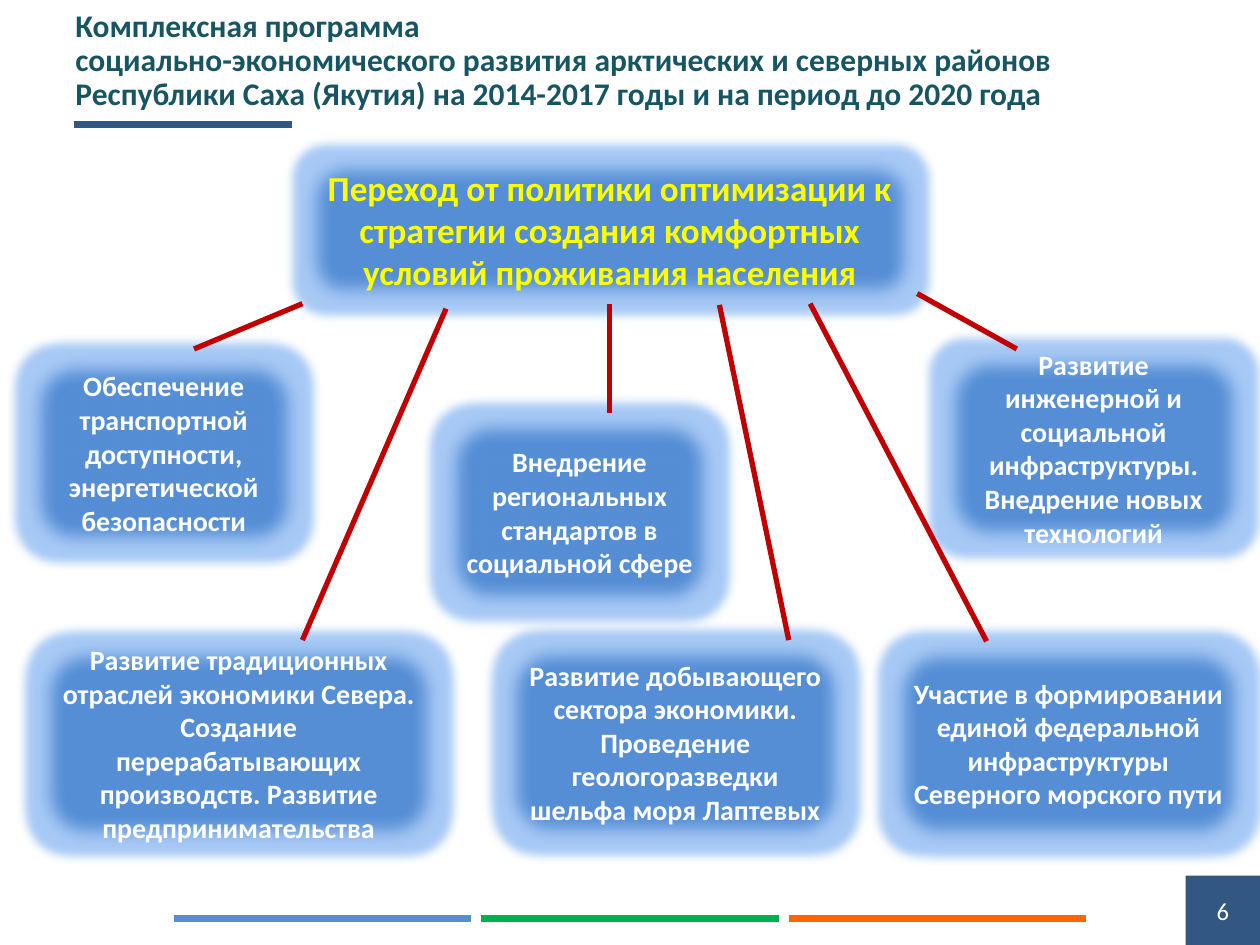
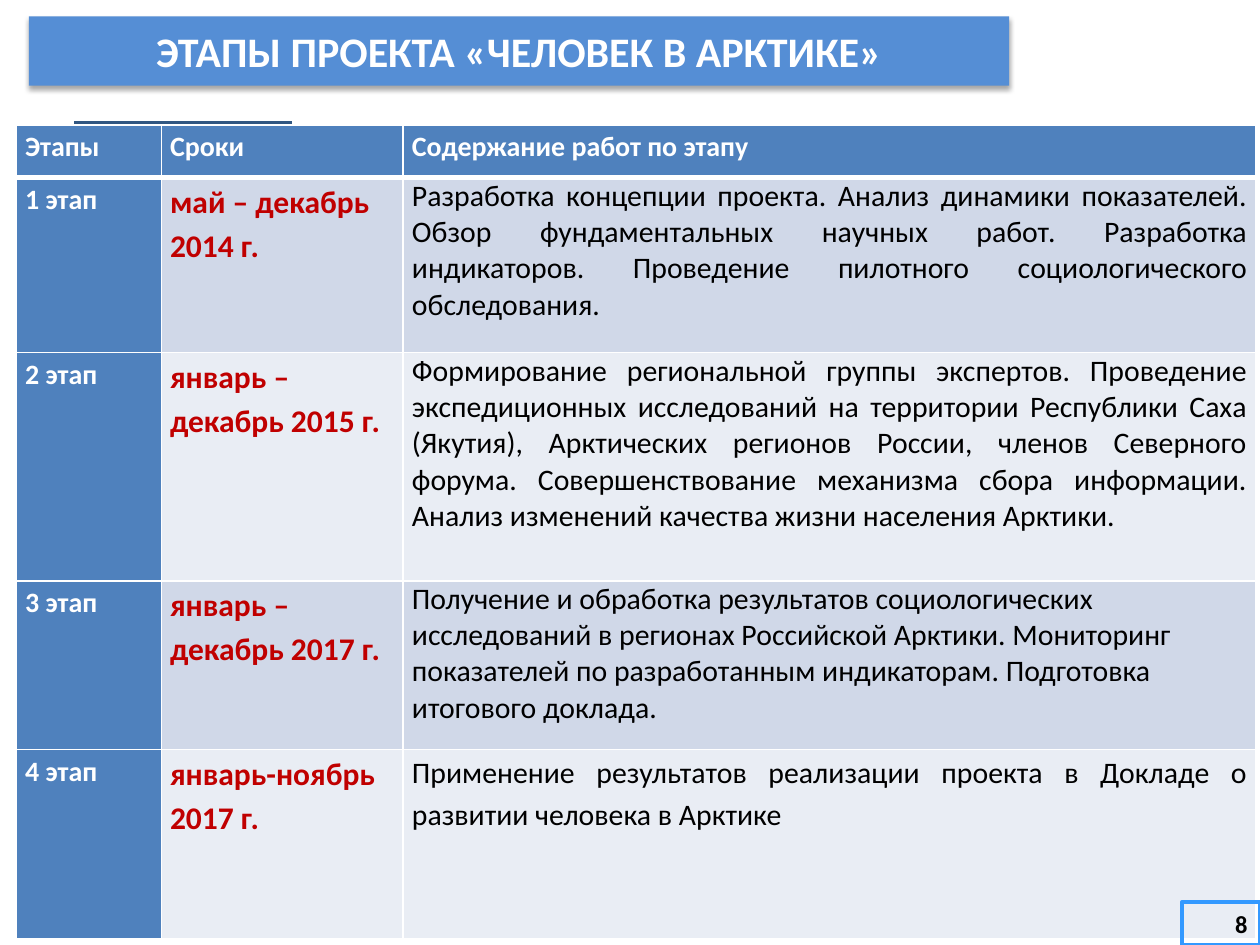
"""Build two slides on the Arctic development programme and project stages."""
from dataclasses import dataclass
from typing import Any, NamedTuple, Optional

from lxml import etree
from pptx import Presentation
from pptx.dml.color import RGBColor
from pptx.enum import shapes, text
from pptx.oxml.ns import qn
from pptx import util as u

EMU_PER_PX = 9144
LEFT, CENTER, RIGHT, JUSTIFY = (
    text.PP_ALIGN.LEFT, text.PP_ALIGN.CENTER, text.PP_ALIGN.RIGHT, text.PP_ALIGN.JUSTIFY)
TOP, MIDDLE = text.MSO_ANCHOR.TOP, text.MSO_ANCHOR.MIDDLE
RECT, ROUNDED = shapes.MSO_SHAPE.RECTANGLE, shapes.MSO_SHAPE.ROUNDED_RECTANGLE


@dataclass(frozen=True)
class Theme:
    """Fonts, colours and type sizes of the deck."""
    font: str = "Calibri"
    title: str = "175563"
    navy: str = "315782"
    blue: str = "558ED5"
    outline: str = "3A5F8C"
    glow: str = "257AE8"
    green: str = "00B050"
    orange: str = "FF6600"
    red: str = "C00000"
    yellow: str = "FFFF00"
    white: str = "FFFFFF"
    black: str = "000000"
    frame: str = "3399FF"
    header: str = "4F81BD"
    bands: tuple[str, str] = ("D0D8E8", "E9EDF4")
    banner_size: int = 24
    hub_size: int = 20
    title_size: int = 18
    body_size: int = 17
    label_size: int = 16
    number_size: int = 14


THEME = Theme()


class Area(NamedTuple):
    """A rectangle in px."""
    left: int
    top: int
    width: int
    height: int


class Goal(NamedTuple):
    """A goal box and the spoke that leads to it."""
    label: str
    area: Area
    start: tuple[int, int]
    end: tuple[int, int]


class Stage(NamedTuple):
    """One row of the stage table."""
    name: str
    period: str
    work: str
    align: Any = JUSTIFY
    spacing: float = 1.0


GOALS = [
    Goal("Участие в формировании единой федеральной инфраструктуры Северного морского пути",
         Area(705, 509, 286, 162), (643, 241), (783, 509)),
    Goal("Развитие добывающего сектора экономики.\n"
         "Проведение геологоразведки шельфа моря Лаптевых",
         Area(398, 508, 276, 162), (571, 242), (626, 508)),
    Goal("Развитие традиционных отраслей экономики Севера. Создание перерабатывающих "
         "производств. Развитие предпринимательства",
         Area(28, 509, 323, 162), (354, 245), (240, 508)),
    Goal("Внедрение региональных стандартов в социальной сфере",
         Area(350, 328, 220, 157), (484, 241), (484, 328)),
    Goal("Развитие инженерной и социальной инфраструктуры. Внедрение новых технологий",
         Area(746, 277, 244, 157), (728, 233), (807, 277)),
    Goal("Обеспечение транспортной доступности, энергетической безопасности",
         Area(20, 281, 220, 157), (240, 241), (154, 277)),
]

STAGES = [
    Stage("1 этап", "май – декабрь 2014 г.",
          "Разработка концепции проекта. Анализ динамики показателей. Обзор фундаментальных "
          "научных работ. Разработка индикаторов. Проведение пилотного социологического "
          "обследования."),
    Stage("2 этап", "январь –\nдекабрь 2015 г.",
          "Формирование региональной группы экспертов. Проведение экспедиционных исследований "
          "на территории Республики Саха (Якутия), Арктических регионов России, членов "
          "Северного форума. Совершенствование механизма сбора информации. Анализ изменений "
          "качества жизни населения Арктики."),
    Stage("3 этап", "январь –\nдекабрь 2017 г.",
          "Получение и обработка результатов социологических исследований в регионах "
          "Российской Арктики. Мониторинг показателей по разработанным индикаторам. "
          "Подготовка итогового доклада.", LEFT),
    Stage("4 этап", "январь-ноябрь 2017 г.",
          "Применение результатов реализации проекта в Докладе о развитии человека в Арктике",
          JUSTIFY, 1.15),
]
HEADINGS = ("Этапы", "Сроки", "Содержание работ по этапу")
COLUMN_WIDTHS = (115, 192, 677)
ROW_HEIGHTS = (42, 139, 181, 134, 150)


def px(length: int) -> u.Emu:
    """Turn px into EMU."""
    return u.Emu(length * EMU_PER_PX)


def place(area: Area) -> list[u.Emu]:
    """Turn an area into EMU lengths."""
    return [px(length) for length in area]


def rgb(colour: str) -> RGBColor:
    """Turn a hex string into a colour."""
    return RGBColor.from_string(colour)


def write(frame: Any, content: str, *, size: int, colour: str, bold: bool = True,
          align: Any = CENTER, spacing: float = 1.0) -> None:
    """Write one paragraph per line of content in the given format."""
    for index, line in enumerate(content.split("\n")):
        para = frame.add_paragraph() if index else frame.paragraphs[0]
        para.text = line
        para.alignment = align
        para.line_spacing = spacing
        for span in para.runs:
            span.font.name = THEME.font
            span.font.size = u.Pt(size)
            span.font.bold = bold
            span.font.color.rgb = rgb(colour)


def add_effect(box: Any, name: str, colour: Optional[str] = None, alpha: int = 100,
               **settings: int) -> None:
    """Append an effect to a shape's effect list."""
    effects = box._element.spPr.find(qn("a:effectLst"))
    effect = etree.SubElement(effects, qn(f"a:{name}"),
                              {key: str(value) for key, value in settings.items()})
    if colour:
        tint = etree.SubElement(effect, qn("a:srgbClr"), val=colour)
        etree.SubElement(tint, qn("a:alpha"), val=str(alpha * 1000))


def add_box(page: Any, kind: Any, area: Area, content: str, *, fill: Optional[str] = None,
            line: Optional[str] = None, line_width: float = 2, **style: Any) -> Any:
    """Draw a preset shape with centred-height text."""
    box = page.shapes.add_shape(kind, *place(area))
    box.shadow.inherit = False
    if fill:
        box.fill.solid()
        box.fill.fore_color.rgb = rgb(fill)
    else:
        box.fill.background()
    if line:
        box.line.color.rgb = rgb(line)
        box.line.width = u.Pt(line_width)
    else:
        box.line.fill.background()
    box.text_frame.word_wrap = True
    box.text_frame.vertical_anchor = MIDDLE
    write(box.text_frame, content, **style)
    return box


def add_glow_box(page: Any, area: Area, content: str, *, size: int = THEME.label_size,
                 colour: str = THEME.white) -> Any:
    """Draw a rounded box with a glow and soft edges."""
    box = add_box(page, ROUNDED, area, content, fill=THEME.blue, line=THEME.outline,
                  size=size, colour=colour)
    add_effect(box, "glow", THEME.glow, 40, rad=139700)
    add_effect(box, "softEdge", rad=127000)
    return box


def add_line(page: Any, start: tuple[int, int], end: tuple[int, int], colour: str,
             width: float) -> Any:
    """Draw a straight line without a shadow."""
    line = page.shapes.add_connector(shapes.MSO_CONNECTOR.STRAIGHT,
                                     *[px(value) for value in (*start, *end)])
    line.line.color.rgb = rgb(colour)
    line.line.width = u.Pt(width)
    etree.SubElement(line._element.spPr, qn("a:effectLst"))
    return line


def add_page(deck: Any) -> Any:
    """Add a blank page with the short rule under the heading."""
    page = deck.slides.add_slide(deck.slide_layouts[6])
    add_line(page, (59, 99), (232, 99), THEME.navy, 3.75)
    return page


def add_footer(page: Any) -> None:
    """Draw the three-colour footer line."""
    for index, colour in enumerate((THEME.blue, THEME.green, THEME.orange)):
        left = 138 + 244 * index
        add_line(page, (left, 729), (left + 236, 729), colour, 3.5)


def build_programme(deck: Any) -> None:
    """Build the programme page with its hub and goals."""
    page = add_page(deck)
    add_footer(page)
    title = page.shapes.add_textbox(*place(Area(50, 0, 900, 97))).text_frame
    title.word_wrap = True
    title.vertical_anchor = MIDDLE
    write(title, "Комплексная программа\vсоциально-экономического развития арктических и "
          "северных районов Республики Саха (Якутия) на 2014-2017 годы и на период до 2020 года",
          size=THEME.title_size, colour=THEME.title, align=LEFT, spacing=0.9)
    add_box(page, RECT, Area(941, 695, 59, 55), "6", fill=THEME.navy,
            size=THEME.number_size, colour=THEME.white, bold=False)
    hub_area = Area(240, 123, 488, 118)
    hub = add_glow_box(page, hub_area,
                       "Переход от политики оптимизации к стратегии создания комфортных "
                       "условий проживания населения",
                       size=THEME.hub_size, colour=THEME.yellow)
    for goal in GOALS:
        add_glow_box(page, goal.area, goal.label)
    hub_bottom = (hub_area.left + hub_area.width // 2, hub_area.top + hub_area.height)
    for goal in GOALS:
        spoke = add_line(page, goal.start, goal.end, THEME.red, 3)
        if goal.start == hub_bottom:
            spoke.begin_connect(hub, 2)


def fill_cell(cell: Any, content: str, fill: str, *, bottom: int = 1, **style: Any) -> None:
    """Give a table cell its borders, fill, margins and text."""
    for side, width in (("lnL", 1), ("lnR", 1), ("lnT", 1), ("lnB", bottom)):
        border = etree.SubElement(cell._tc.get_or_add_tcPr(), qn(f"a:{side}"),
                                  w=str(u.Pt(width)))
        paint = etree.SubElement(border, qn("a:solidFill"))
        etree.SubElement(paint, qn("a:srgbClr"), val=THEME.white)
    cell.fill.solid()
    cell.fill.fore_color.rgb = rgb(fill)
    cell.margin_left = cell.margin_right = px(7)
    cell.margin_top = cell.margin_bottom = 0
    cell.vertical_anchor = TOP
    write(cell.text_frame, content, **style)


def build_stages(deck: Any) -> None:
    """Build the page with the table of project stages."""
    page = add_page(deck)
    area = Area(13, 99, sum(COLUMN_WIDTHS), sum(ROW_HEIGHTS))
    table = page.shapes.add_table(len(ROW_HEIGHTS), len(COLUMN_WIDTHS), *place(area)).table
    for column, width in zip(table.columns, COLUMN_WIDTHS):
        column.width = px(width)
    for row, height in zip(table.rows, ROW_HEIGHTS):
        row.height = px(height)
    label = dict(size=THEME.label_size, colour=THEME.white, align=LEFT, spacing=1.15)
    for index, heading in enumerate(HEADINGS):
        fill_cell(table.cell(0, index), heading, THEME.header, bottom=3, **label)
    for row, stage in enumerate(STAGES, 1):
        band = THEME.bands[(row - 1) % 2]
        fill_cell(table.cell(row, 0), stage.name, THEME.header, **label)
        fill_cell(table.cell(row, 1), stage.period, band, size=THEME.title_size,
                  colour=THEME.red, align=LEFT, spacing=1.15)
        fill_cell(table.cell(row, 2), stage.work, band, size=THEME.body_size,
                  colour=THEME.black, bold=False, align=stage.align, spacing=stage.spacing)
    banner = add_box(page, RECT, Area(23, 13, 778, 55), "ЭТАПЫ ПРОЕКТА «ЧЕЛОВЕК В АРКТИКЕ»",
                     fill=THEME.blue, size=THEME.banner_size, colour=THEME.white)
    add_effect(banner, "outerShdw", THEME.black, 35, blurRad=u.Pt(3.1), dist=u.Pt(1.8),
               dir=5400000, rotWithShape=0)
    add_box(page, RECT, Area(938, 716, 62, 34), "8", line=THEME.frame, line_width=2.25,
            size=THEME.number_size, colour=THEME.black, align=RIGHT)


def main() -> None:
    """Build and save the deck."""
    deck = Presentation()
    deck.slide_width, deck.slide_height = px(1000), px(750)
    build_programme(deck)
    build_stages(deck)
    deck.save("out.pptx")


if __name__ == "__main__":
    main()
